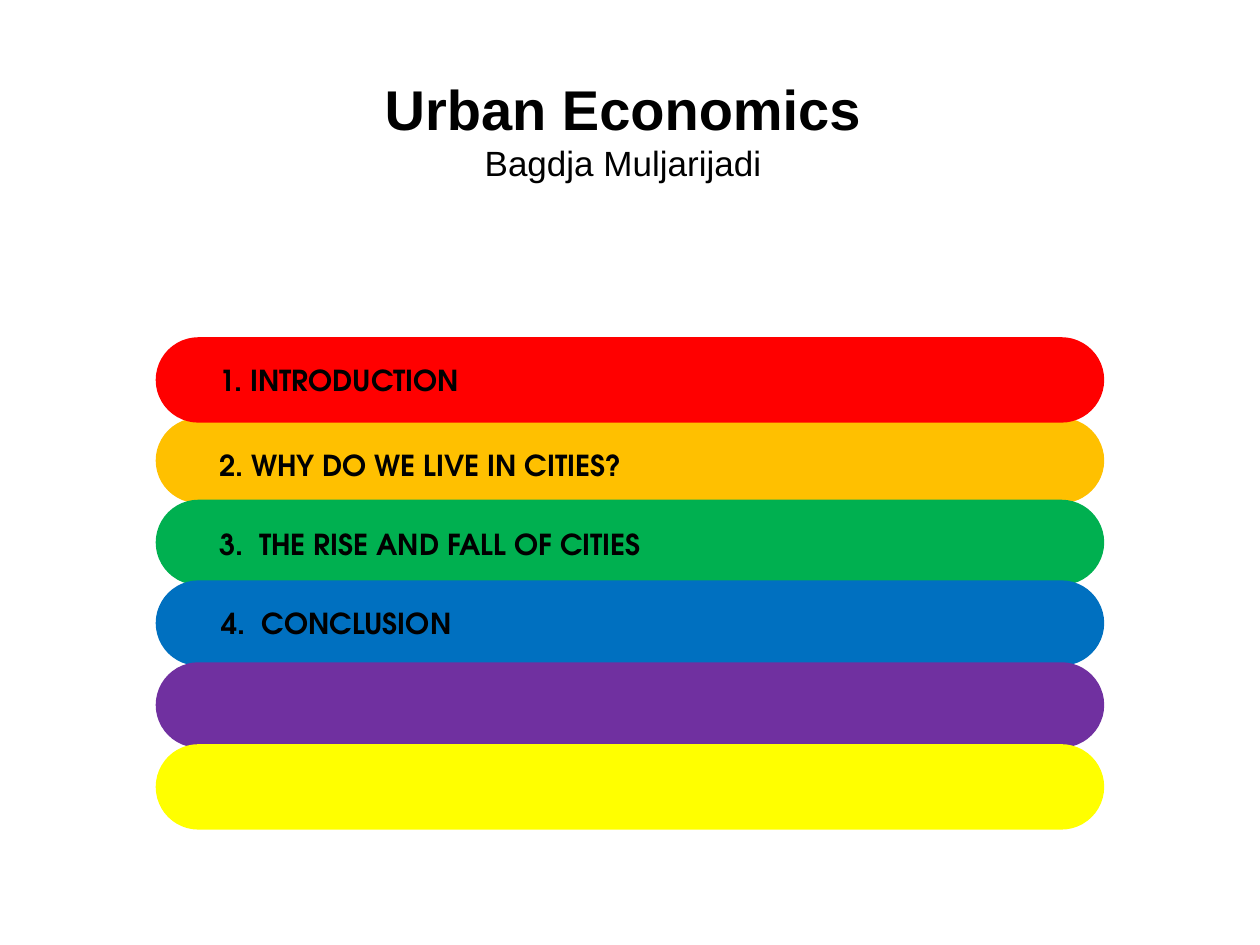
"""Build the Urban Economics agenda slide with six coloured bars."""
from pptx import Presentation
from pptx.dml.color import RGBColor
from pptx.enum.shapes import MSO_SHAPE as Shape
from pptx.enum.text import MSO_ANCHOR as Anchor, MSO_AUTO_SIZE as AutoSize, PP_ALIGN as Align
from pptx.util import Pt

SCALE = 9144
THEME = {
    "ink": "000000",
    "bars": ["FF0000", "FFC000", "00B050", "0070C0", "7030A0", "FFFF00"],
    "title": {"name": "Arial", "size": Pt(32), "bold": True},
    "author": {"name": "Arial", "size": Pt(20), "bold": False},
    "topic": {"name": "TeX Gyre Adventor", "size": Pt(16.5), "bold": True},
}
INSETS = {"margin_left": 10 * SCALE, "margin_right": 10 * SCALE,
          "margin_top": 5 * SCALE, "margin_bottom": 5 * SCALE}


def apply_format(target, values):
    for name, value in values.items():
        setattr(target, name, value)


def write_line(para, text, style, align=Align.LEFT, indent=0):
    para._p.get_or_add_pPr().set("marL", str(indent * SCALE))
    para._p.get_or_add_pPr().set("indent", "0")
    apply_format(para, {"alignment": align, "line_spacing": 1.0})
    span = para.add_run()
    span.text = text
    apply_format(span.font, THEME[style])
    span.font.color.rgb = RGBColor.from_string(THEME["ink"])


deck = Presentation()
apply_format(deck, {"slide_width": 1000 * SCALE, "slide_height": 750 * SCALE})
page = deck.slides.add_slide(deck.slide_layouts[5])

title = page.shapes.title
apply_format(title, {"left": 4 * SCALE, "top": 50 * SCALE,
                     "width": 981 * SCALE, "height": 121 * SCALE})
frame = title.text_frame
apply_format(frame, INSETS | {"margin_top": 9 * SCALE, "word_wrap": True,
                              "vertical_anchor": Anchor.TOP, "auto_size": AutoSize.NONE})
write_line(frame.paragraphs[0], "Urban Economics", "title", Align.CENTER)
write_line(frame.add_paragraph(), "Bagdja Muljarijadi", "author", Align.CENTER)

bars = page.shapes.add_group_shape()
for index in (1, 0, 2, 3, 4, 5):
    top = 269 + index * 323 // 5
    bar = bars.shapes.add_shape(Shape.ROUNDED_RECTANGLE, 125 * SCALE, top * SCALE,
                                750 * SCALE, 65 * SCALE)
    color = RGBColor.from_string(THEME["bars"][index])
    bar.adjustments[0] = 0.5
    bar.shadow.inherit = False
    bar.fill.solid()
    bar.fill.fore_color.rgb = color
    bar.line.color.rgb = color
    bar.line.width = Pt(2)
    if index == 0:
        apply_format(bar.text_frame, INSETS | {"word_wrap": True, "vertical_anchor": Anchor.MIDDLE})
        write_line(bar.text_frame.paragraphs[0], "1. INTRODUCTION", "topic", indent=30)

topics = [
    ("2. WHY DO WE LIVE IN CITIES?", 134, 350, 697),
    ("3.  THE RISE AND FALL OF CITIES", 134, 413, 650),
    ("4.  CONCLUSION", 136, 476, 508),
]
for text, left, top, width in topics:
    box = page.shapes.add_textbox(left * SCALE, top * SCALE, width * SCALE, 38 * SCALE)
    apply_format(box.text_frame, INSETS | {"word_wrap": True,
                                           "auto_size": AutoSize.SHAPE_TO_FIT_TEXT})
    write_line(box.text_frame.paragraphs[0], text, "topic", indent=30)

deck.save("out.pptx")
